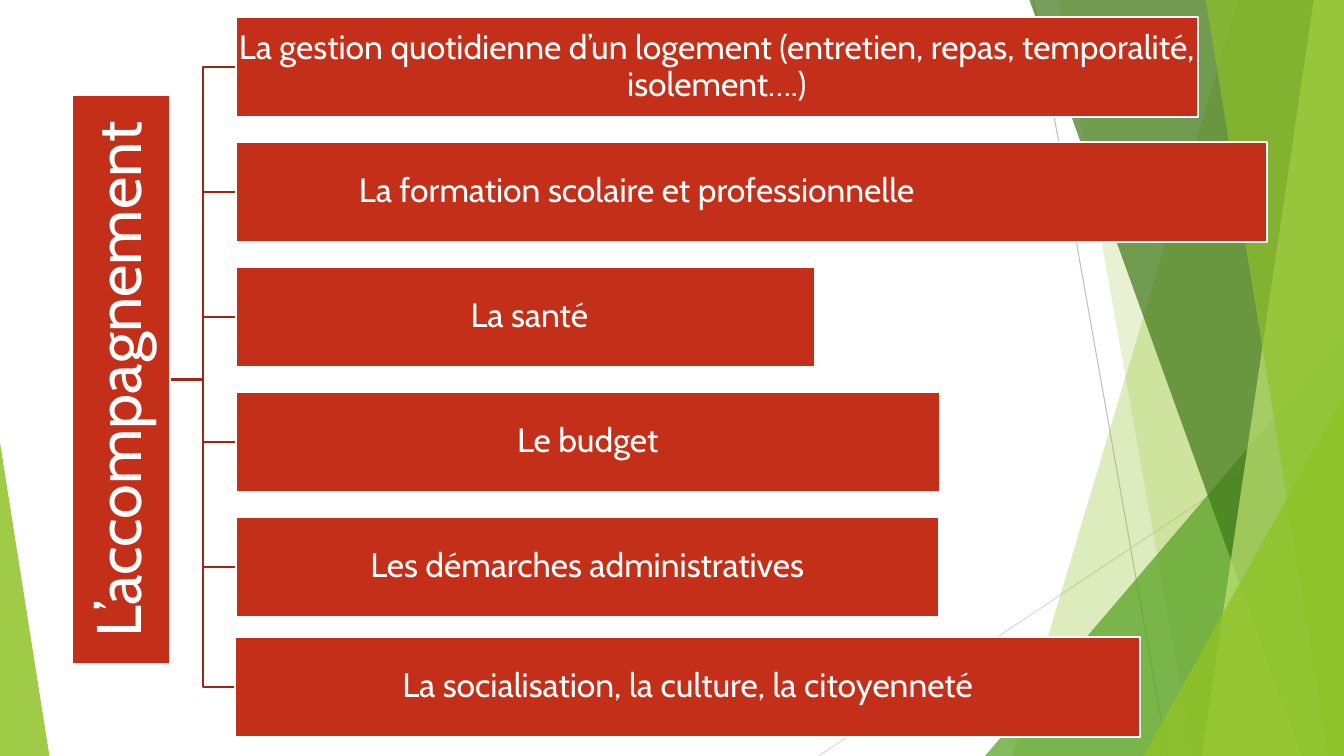
from lxml import etree
from pptx import Presentation
from pptx.dml.color import RGBColor
from pptx.enum.shapes import MSO_CONNECTOR, MSO_SHAPE
from pptx.enum.text import MSO_ANCHOR, PP_ALIGN
from pptx.oxml.ns import qn
from pptx.util import Inches, Pt

STRAIGHT, ELBOW = MSO_CONNECTOR.STRAIGHT, MSO_CONNECTOR.ELBOW
RECTANGLE, TRIANGLE = MSO_SHAPE.RECTANGLE, MSO_SHAPE.ISOSCELES_TRIANGLE
CENTER, LEFT, MIDDLE = PP_ALIGN.CENTER, PP_ALIGN.LEFT, MSO_ANCHOR.MIDDLE
WIDTH, HEIGHT = 13.33, 7.5
FONT = "Cabin"
COLORS = {
    "red": "C42F1A", "dark red": "9D2615", "white": "FFFFFF",
    "green": "90C226", "mid green": "54A021", "dark green": "3F7819",
    "pale green": "C0E474", "gray": "BFBFBF", "light gray": "D9D9D9",
}

presentation = Presentation()
presentation.slide_width, presentation.slide_height = Inches(WIDTH), Inches(HEIGHT)
slide = presentation.slides.add_slide(presentation.slide_layouts[6])
shapes = slide.shapes


def add_line(kind, start, end, color, weight):
    line = shapes.add_connector(kind, *(Inches(value) for value in start + end))
    line.line.color.rgb = RGBColor.from_string(COLORS[color])
    line.line.width = Pt(weight)
    etree.SubElement(line.element.spPr, qn("a:effectLst"))
    return line


def paint(shape, color, opacity=100):
    shape.shadow.inherit = False
    shape.fill.solid()
    shape.fill.fore_color.rgb = RGBColor.from_string(COLORS[color])
    shape.line.fill.background()
    if opacity < 100:
        tint = shape.element.spPr.find(qn("a:solidFill"))[0]
        etree.SubElement(tint, qn("a:alpha"), val=str(opacity * 1000))


# Thin background lines
add_line(STRAIGHT, (10.25, 0), (11.58, HEIGHT), "gray", 0.75)
add_line(STRAIGHT, (WIDTH, 4.03), (8.12, HEIGHT), "light gray", 0.75)

# Green facets: a band runs from its top and bottom x to the right edge,
# a triangle has left, top, width and apex position
facets = [
    ("band", (12.28, 10.04), "green", 30),
    ("band", (10.5, 11.83), "green", 20),
    ("triangle", (9.77, 3.33, 3.56, 1), "mid green", 72),
    ("band", (10.21, 12.91), "dark green", 70),
    ("band", (13.03, 11.92), "pale green", 70),
    ("band", (11.96, 13.18), "green", 65),
    ("triangle", (11.34, 3.93, 1.99, 1), "green", 80),
    ("triangle", (0, 4.39, 0.49, 0), "green", 85),
]
for kind, geometry, color, opacity in facets:
    if kind == "band":
        top_x, bottom_x = geometry
        builder = shapes.build_freeform(Inches(top_x), 0)
        corners = [(WIDTH, 0), (WIDTH, HEIGHT), (bottom_x, HEIGHT)]
        builder.add_line_segments([(Inches(x), Inches(y)) for x, y in corners])
        facet = builder.convert_to_shape()
    else:
        left, top, width, apex = geometry
        facet = shapes.add_shape(TRIANGLE, Inches(left), Inches(top),
                                 Inches(width), Inches(HEIGHT - top))
        facet.adjustments[0] = apex
    paint(facet, color, opacity)

# Root box and topic bars: text, left, top, width, height, size, inset,
# left inset, alignment
BAR_LEFT, BAR_TOP, BAR_STEP, BAR_HEIGHT = 2.34, 0.17, 1.24, 0.99
topics = [
    ("La gestion quotidienne d’un logement (entretien, repas, temporalité, isolement….)",
     9.54, 0.02, CENTER),
    ("La formation scolaire et professionnelle", 10.23, 1.22, LEFT),
    ("La santé", 5.74, 0.1, CENTER),
    ("Le budget", 6.98, 0.02, CENTER),
    ("Les démarches administratives", 6.97, 0.02, CENTER),
    ("La socialisation, la culture, la citoyenneté", 8.98, 0.02, CENTER),
]
boxes = [("L’accompagnement", 0.71, 0.94, 0.98, 5.65, 45, 0.03, 0.03, CENTER)]
for index, (text, width, left_inset, alignment) in enumerate(topics):
    last = index == len(topics) - 1
    left = 2.33 if last else BAR_LEFT
    top = 6.32 if last else BAR_TOP + index * BAR_STEP
    boxes.append((text, left, top, width, BAR_HEIGHT, 24, 0.02, left_inset, alignment))

drawn = []
for text, left, top, width, height, size, inset, left_inset, alignment in boxes:
    box = shapes.add_shape(RECTANGLE, Inches(left), Inches(top), Inches(width), Inches(height))
    paint(box, "red")
    box.line.color.rgb = RGBColor.from_string(COLORS["white"])
    box.line.width = Pt(1.5)
    frame = box.text_frame
    frame_format = {
        "word_wrap": True, "vertical_anchor": MIDDLE,
        "margin_left": Inches(left_inset), "margin_right": Inches(inset),
        "margin_top": Inches(inset), "margin_bottom": Inches(inset),
    }
    for name, value in frame_format.items():
        setattr(frame, name, value)
    paragraph = frame.paragraphs[0]
    paragraph.text = text
    paragraph.alignment = alignment
    paragraph.line_spacing = 0.9
    paragraph.font.name = FONT
    paragraph.font.size = Pt(size)
    paragraph.font.color.rgb = RGBColor.from_string(COLORS["white"])
    drawn.append(box)

# The root reads upwards
root, *bars = drawn
root.text_frame._txBody.bodyPr.set("vert", "vert270")

# Elbow connectors from the root to each bar, behind the boxes
for bar in bars:
    branch = add_line(ELBOW, (1.69, 3.76), (BAR_LEFT, bar.top.inches), "dark red", 1.5)
    branch.begin_connect(root, 3)
    branch.end_connect(bar, 1)
    root.element.addprevious(branch.element)

presentation.save("out.pptx")
